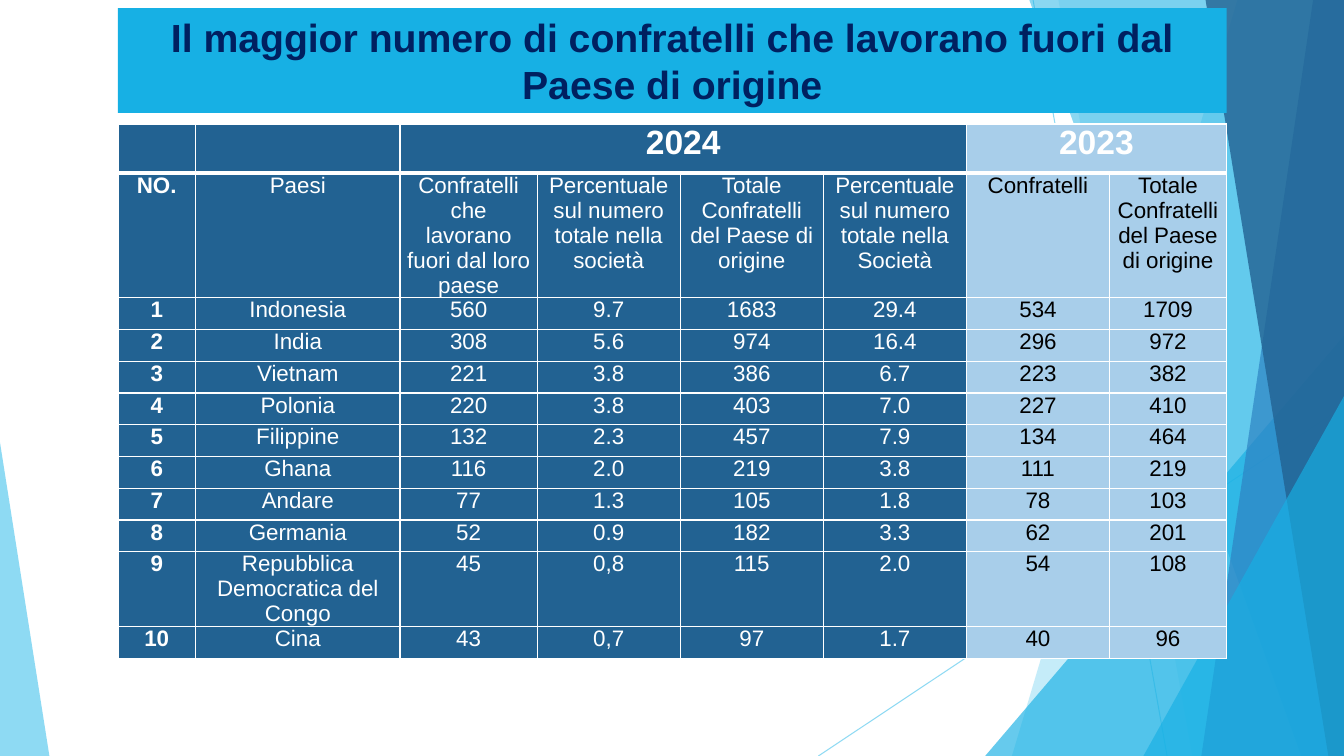
from lxml import etree
from pptx import Presentation
from pptx import util as u
from pptx.dml.color import RGBColor
from pptx.enum import shapes, text
from pptx.oxml import ns

PX = 4572  # 200 px to the inch
PAGE = (0, 0, 2667, 1500)
TITLE = (234, 16, 2200, 208)
TABLE = (234, 246, 2200, 1092)

FONT = "Arial"
WHITE = RGBColor(0xFF, 0xFF, 0xFF)
BLACK = RGBColor(0, 0, 0)
NAVY = RGBColor(0x00, 0x20, 0x60)
SKY = RGBColor(0x5F, 0xCB, 0xEF)
CYAN = RGBColor(0x17, 0xB0, 0xE4)
BLUE = RGBColor(0x2E, 0x83, 0xC3)
DEEP = RGBColor(0x22, 0x62, 0x92)
PALE = RGBColor(0xA8, 0xCE, 0xEA)

COLUMNS = [154, 406, 272, 284, 284, 284, 284, 232]
FIRST_2023 = 6
YEAR_ROW, LABEL_ROW, DATA_ROW, TALL_ROW = 98, 246, 63, 148
ORIGIN_TOTAL = "Totale Confratelli del Paese di origine"
LABELS = ["NO.", "Paesi", "Confratelli che lavorano fuori dal loro paese",
          "Percentuale sul numero totale nella società", ORIGIN_TOTAL,
          "Percentuale sul numero totale nella Società", "Confratelli", ORIGIN_TOTAL]
COUNTRIES = [
    ("Indonesia", "560", "9.7", "1683", "29.4", "534", "1709"),
    ("India", "308", "5.6", "974", "16.4", "296", "972"),
    ("Vietnam", "221", "3.8", "386", "6.7", "223", "382"),
    ("Polonia", "220", "3.8", "403", "7.0", "227", "410"),
    ("Filippine", "132", "2.3", "457", "7.9", "134", "464"),
    ("Ghana", "116", "2.0", "219", "3.8", "111", "219"),
    ("Andare", "77", "1.3", "105", "1.8", "78", "103"),
    ("Germania", "52", "0.9", "182", "3.3", "62", "201"),
    ("Repubblica Democratica del Congo", "45", "0,8", "115", "2.0", "54", "108"),
    ("Cina", "43", "0,7", "97", "1.7", "40", "96"),
]


def px(*lengths):
    return [u.Emu(length * PX) for length in lengths]


def write(frame, words, size=16, color=WHITE, bold=False, after=0):
    para = frame.paragraphs[0]
    para.alignment = text.PP_ALIGN.CENTER
    para.space_after = u.Pt(after)
    span = para.add_run()
    span.text = words
    span.font.name = FONT
    span.font.size = u.Pt(size)
    span.font.bold = bold
    span.font.color.rgb = color


def set_alpha(shape, percent):
    color = next(shape._element.spPr.iter(ns.qn("a:srgbClr")))
    etree.SubElement(color, ns.qn("a:alpha"), val=str(percent * 1000))


def paint(shape, color, alpha=100):
    shape.shadow.inherit = False
    shape.fill.solid()
    shape.fill.fore_color.rgb = color
    shape.line.fill.background()
    if alpha < 100:
        set_alpha(shape, alpha)


def add_ray(page, start, end):
    ray = page.shapes.add_connector(shapes.MSO_CONNECTOR.STRAIGHT, *px(*start, *end))
    ray.line.color.rgb = SKY
    ray.line.width = u.Pt(0.75)
    set_alpha(ray, 70)
    etree.SubElement(ray._element.spPr, ns.qn("a:effectLst"))


def add_band(page, box, top_x, bottom_x, color, alpha):
    """Fill from a slanted left edge to the right edge of the box."""
    left, top, width, height = box
    right, bottom = left + width, top + height
    builder = page.shapes.build_freeform(left + top_x, top - 2, scale=PX)
    builder.add_line_segments([(right, top - 2), (right, bottom), (left + bottom_x, bottom)])
    paint(builder.convert_to_shape(), color, alpha)


def add_triangle(page, box, apex, color, alpha):
    triangle = page.shapes.add_shape(shapes.MSO_SHAPE.ISOSCELES_TRIANGLE, *px(*box))
    triangle.adjustments[0] = apex
    paint(triangle, color, alpha)


def add_backdrop(page, box):
    left, top, width, height = box
    right, bottom = left + width, top + height

    def add_corner(corner_width, corner_height):
        corner = (right - corner_width, bottom - corner_height, corner_width, corner_height)
        add_triangle(page, corner, 1, CYAN, 66)

    add_ray(page, (left + 2050, top), (left + 2316, bottom))
    add_ray(page, (right, top + 806), (left + 1624, bottom))
    add_band(page, box, 2456, 2008, SKY, 36)
    add_band(page, box, 2100, 2366, SKY, 20)
    add_corner(712, 834)
    add_band(page, box, 2042, 2582, CYAN, 50)
    add_band(page, box, 2606, 2384, BLUE, 70)
    add_band(page, box, 2392, 2636, DEEP, 80)
    add_corner(398, 714)
    add_triangle(page, (left, bottom - 622, 98, 622), 0, SKY, 70)


def style_cell(cell, fill, top=1, bottom=1):
    cell.margin_left = cell.margin_right = u.Inches(0.07)
    cell.margin_top = cell.margin_bottom = 0
    properties = cell._tc.get_or_add_tcPr()
    for side, points in {"L": 1, "R": 1, "T": top, "B": bottom}.items():
        line = etree.SubElement(properties, ns.qn(f"a:ln{side}"), w=str(u.Pt(points)))
        solid = etree.SubElement(line, ns.qn("a:solidFill"))
        etree.SubElement(solid, ns.qn("a:srgbClr"), val=str(WHITE))
    cell.fill.solid()
    cell.fill.fore_color.rgb = fill


def add_country_table(page, box):
    rows = [LABELS] + [(str(number), *country) for number, country in enumerate(COUNTRIES, 1)]
    frame = page.shapes.add_table(len(rows) + 1, len(COLUMNS), *px(*box))
    table = frame.table
    table.first_row = table.horz_banding = False
    for column, width in zip(table.columns, px(*COLUMNS)):
        column.width = width
    heights = [YEAR_ROW, LABEL_ROW]
    heights += [TALL_ROW if len(country[0]) > 20 else DATA_ROW for country in COUNTRIES]
    for row, height in zip(table.rows, px(*heights)):
        row.height = height

    for column in range(len(COLUMNS)):
        recent = column < FIRST_2023
        fill = DEEP if recent else PALE
        style_cell(table.cell(0, column), fill, bottom=3)
        for row, values in enumerate(rows, 1):
            cell = table.cell(row, column)
            style_cell(cell, fill, top=3 if row == 1 else 1)
            write(cell.text_frame, values[column], color=WHITE if recent else BLACK,
                  bold=column == 0, after=10)

    for year, first, last in (("2024", 2, FIRST_2023 - 1), ("2023", FIRST_2023, 7)):
        heading = table.cell(0, first)
        heading.merge(table.cell(0, last))
        write(heading.text_frame, year, size=24, bold=True, after=10)


def add_title(page, box):
    banner = page.shapes.add_shape(shapes.MSO_SHAPE.RECTANGLE, *px(*box))
    paint(banner, CYAN)
    banner.text_frame.word_wrap = True
    banner.text_frame.vertical_anchor = text.MSO_ANCHOR.MIDDLE
    write(banner.text_frame,
          "Il maggior numero di confratelli che lavorano fuori dal Paese di origine",
          size=28, color=NAVY, bold=True)


def main():
    deck = Presentation()
    deck.slide_width, deck.slide_height = px(*PAGE[2:])
    page = deck.slides.add_slide(deck.slide_layouts[6])
    add_backdrop(page, PAGE)
    add_country_table(page, TABLE)
    add_title(page, TITLE)
    deck.save("out.pptx")


if __name__ == "__main__":
    main()
